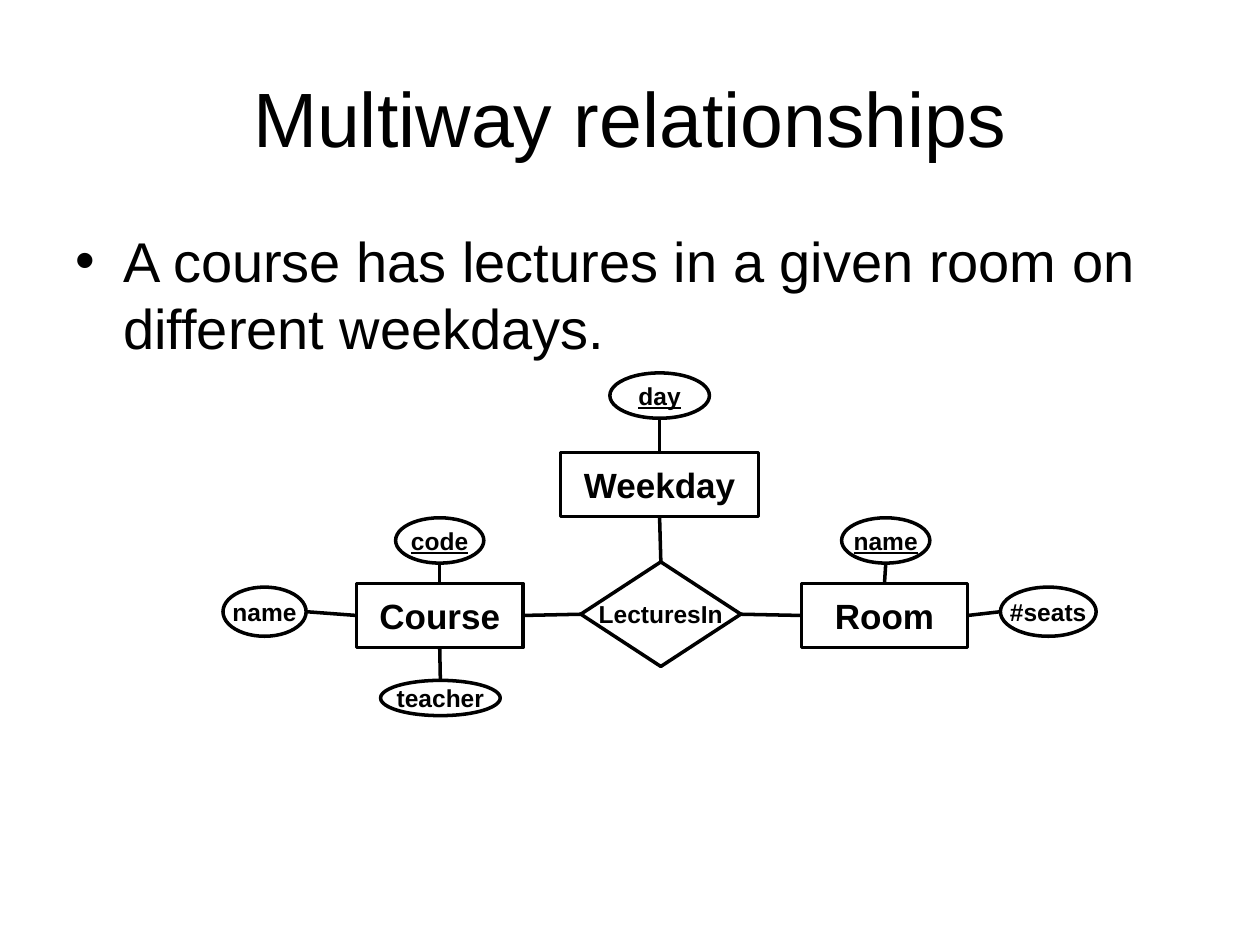
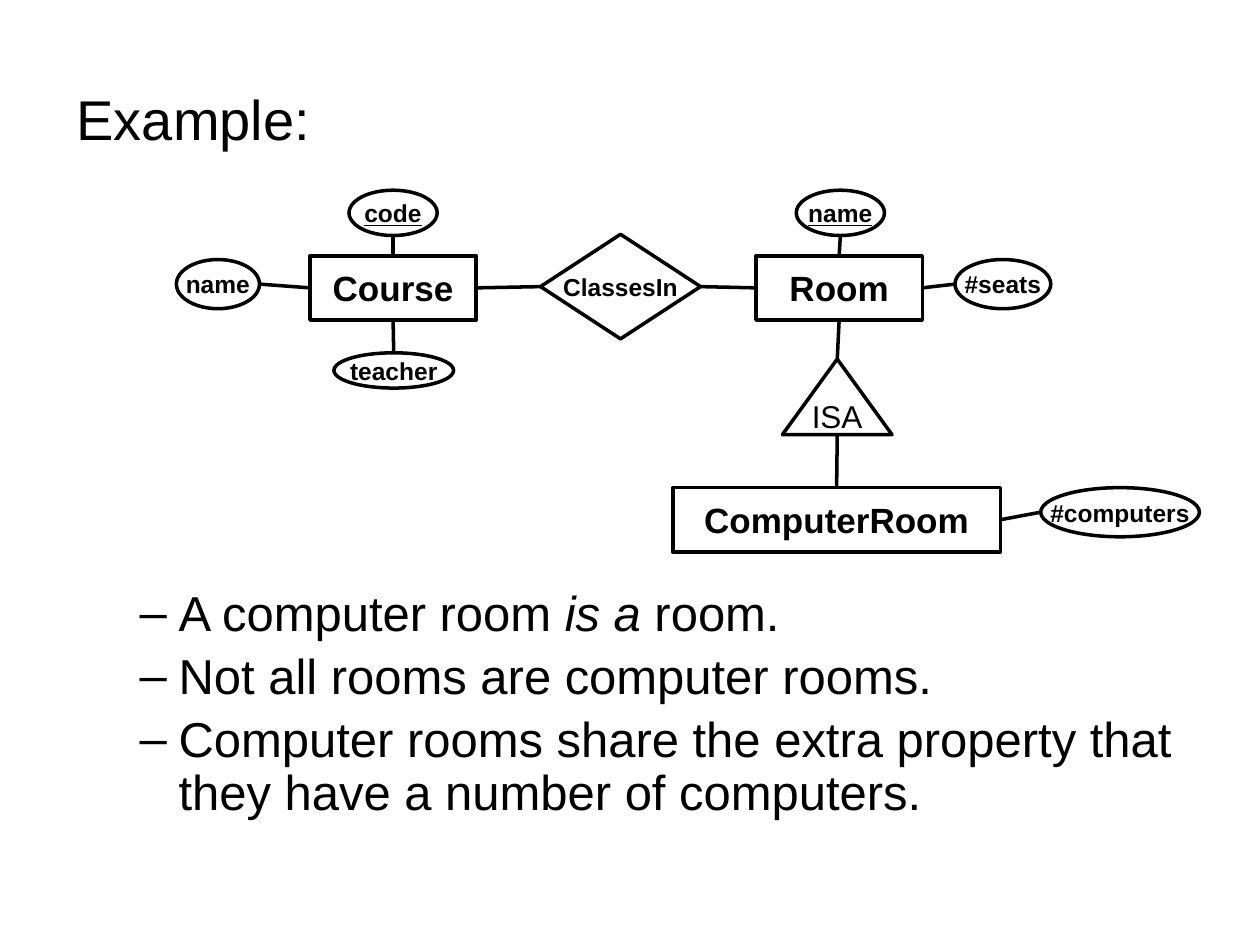
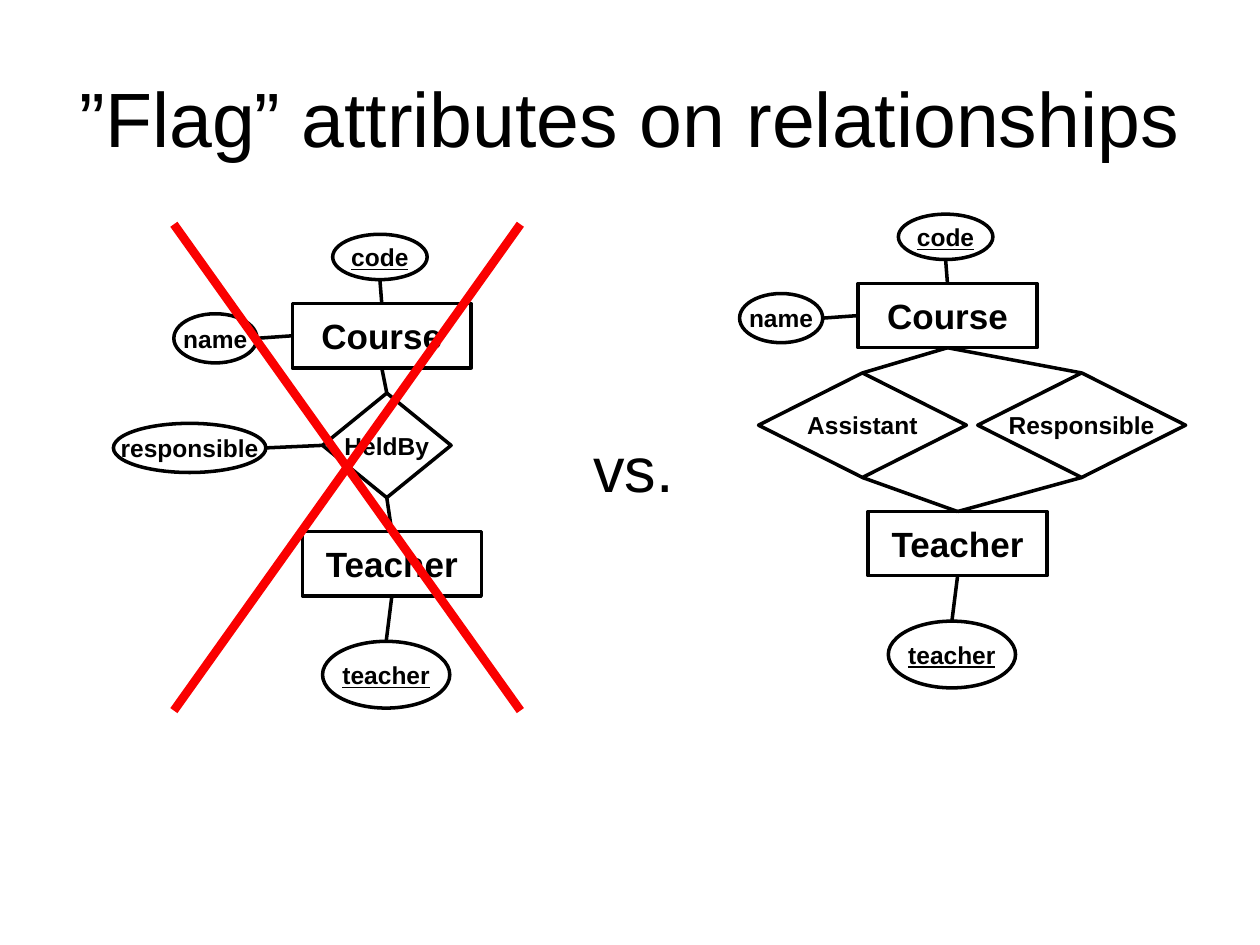
from typing import NamedTuple

from lxml.etree import SubElement
from pptx import Presentation
from pptx.dml.color import RGBColor
from pptx.enum.shapes import MSO_CONNECTOR, MSO_SHAPE
from pptx.enum.text import MSO_ANCHOR, PP_ALIGN
from pptx.oxml.ns import qn
from pptx.util import Inches, Pt

BLACK = RGBColor(0, 0, 0)
RED = RGBColor(0xFA, 0, 0)
FONT = "Arial"
TOP, LEFT, BOTTOM, RIGHT = range(4)
BOX, OVAL = MSO_SHAPE.RECTANGLE, MSO_SHAPE.OVAL
DIAMOND, TRIANGLE = MSO_SHAPE.DIAMOND, MSO_SHAPE.ISOSCELES_TRIANGLE
JOINED = (BOX, DIAMOND)  # kinds whose sites are numbered like the sides
STYLES = {
    BOX: {"size": Pt(20), "bold": True},
    OVAL: {"size": Pt(14), "bold": True},
    DIAMOND: {"size": Pt(14), "bold": True},
    TRIANGLE: {"size": Pt(18), "bold": False},
}


class Node(NamedTuple):
    text: str
    kind: MSO_SHAPE
    x: float
    y: float
    w: float
    h: float
    key: bool = False


class Link(NamedTuple):
    start: str
    side: int
    end: str
    goal: int


class Group(NamedTuple):
    """Nodes placed from the corner of the first one, with their links."""
    nodes: tuple[Node, ...]
    links: tuple[Link, ...]


class Level(NamedTuple):
    mark: str
    size: int
    margin: float
    hang: float
    spacing: float


COURSE = Group(
    (Node("Course", BOX, 0, 0, 1.32, 0.51),
     Node("name", OVAL, -1.06, 0.03, 0.66, 0.39),
     Node("code", OVAL, 0.31, -0.52, 0.7, 0.36, True),
     Node("teacher", OVAL, 0.19, 0.77, 0.95, 0.28)),
    (Link("name", RIGHT, "Course", LEFT),
     Link("code", BOTTOM, "Course", TOP),
     Link("teacher", TOP, "Course", BOTTOM)))
ROOM = Group(
    (Node("Room", BOX, 0, 0, 1.32, 0.51),
     Node("name", OVAL, 0.32, -0.52, 0.7, 0.36, True),
     Node("#seats", OVAL, 1.58, 0.03, 0.76, 0.39)),
    (Link("name", BOTTOM, "Room", TOP),
     Link("#seats", LEFT, "Room", RIGHT)))
WEEKDAY = Group(
    (Node("Weekday", BOX, 0, 0, 1.57, 0.51),
     Node("day", OVAL, 0.39, -0.63, 0.79, 0.36, True)),
    (Link("Weekday", TOP, "day", BOTTOM),))
LAB = Group(
    (Node("ComputerRoom", BOX, 0, 0, 2.6, 0.51),
     Node("#computers", OVAL, 2.92, 0, 1.26, 0.39),
     Node("ISA", TRIANGLE, 0.87, -1.02, 0.87, 0.6)),
    (Link("#computers", LEFT, "ComputerRoom", RIGHT),
     Link("ComputerRoom", TOP, "ISA", BOTTOM)))
STAFF = Group(
    (Node("Course", BOX, 0, 0, 1.42, 0.51),
     Node("code", OVAL, 0.32, -0.55, 0.75, 0.36, True),
     Node("name", OVAL, -0.94, 0.08, 0.66, 0.39),
     Node("teacher", OVAL, 0.24, 2.68, 1.01, 0.53, True),
     Node("Teacher", BOX, 0.08, 1.81, 1.42, 0.51)),
    (Link("name", RIGHT, "Course", LEFT),
     Link("Course", TOP, "code", BOTTOM),
     Link("Teacher", BOTTOM, "teacher", TOP)))

PLAIN = Level("", 32, 0.38, 0.38, 0.9)
POINT = Level("•", 32, 0.38, 0.38, 1)
DASH = Level("–", 28, 0.81, 0.31, 0.9)


def style(run, **values) -> None:
    font = run.font
    font.color.rgb = BLACK
    for name, value in {"name": FONT, **values}.items():
        setattr(font, name, value)


def add_node(slide, node: Node, dx: float = 0, dy: float = 0):
    shape = slide.shapes.add_shape(
        node.kind, Inches(node.x + dx), Inches(node.y + dy),
        Inches(node.w), Inches(node.h))
    shape.shadow.inherit = False
    shape.fill.background()
    shape.line.color.rgb = BLACK
    shape.line.width = Pt(2)
    frame = shape.text_frame
    frame.word_wrap = False
    frame.vertical_anchor = MSO_ANCHOR.MIDDLE
    para = frame.paragraphs[0]
    para.alignment = PP_ALIGN.CENTER
    run = para.add_run()
    run.text = node.text
    style(run, underline=node.key, **STYLES[node.kind])
    return shape


def add_line(slide, start: tuple, end: tuple, color=BLACK, width: int = 2):
    line = slide.shapes.add_connector(MSO_CONNECTOR.STRAIGHT, *start, *end)
    line.line.color.rgb = color
    line.line.width = Pt(width)
    SubElement(line._element.spPr, qn("a:effectLst"))
    return line


def middle(shape, side: int) -> tuple:
    """Middle of one side of a shape."""
    across, down = {TOP: (1, 0), LEFT: (0, 1), BOTTOM: (1, 2), RIGHT: (2, 1)}[side]
    return (shape.left + shape.width * across // 2,
            shape.top + shape.height * down // 2)


def link(slide, start, side: int, end, goal: int) -> None:
    line = add_line(slide, middle(start, side), middle(end, goal))
    if start.auto_shape_type in JOINED:
        line.begin_connect(start, side)
    if end.auto_shape_type in JOINED:
        line.end_connect(end, goal)


def add_group(slide, group: Group, x: float, y: float) -> dict:
    shapes = {node.text: add_node(slide, node, x, y) for node in group.nodes}
    for start, side, end, goal in group.links:
        link(slide, shapes[start], side, shapes[end], goal)
    return shapes


def add_box(slide, x: float, y: float, w: float, h: float):
    frame = slide.shapes.add_textbox(
        Inches(x), Inches(y), Inches(w), Inches(h)).text_frame
    frame.word_wrap = True
    return frame


def add_text(slide, text: str, size: int, *place: float):
    frame = add_box(slide, *place)
    run = frame.paragraphs[0].add_run()
    run.text = text
    style(run, size=Pt(size))
    return frame


def add_title(slide, text: str) -> None:
    frame = add_text(slide, text, 44, 0.5, 0.3, 9, 1.25)
    frame.vertical_anchor = MSO_ANCHOR.MIDDLE
    frame.paragraphs[0].alignment = PP_ALIGN.CENTER


def add_list(slide, level: Level, items: list, *place: float) -> None:
    """Draw paragraphs; every second part of an item is italic."""
    frame = add_box(slide, *place)
    for i, parts in enumerate(items):
        para = frame.add_paragraph() if i else frame.paragraphs[0]
        para.line_spacing = level.spacing
        para.space_before = Pt(level.size * 0.2)
        props = para._p.get_or_add_pPr()
        props.set("marL", str(Inches(level.margin)))
        props.set("indent", str(-Inches(level.hang)))
        if level.mark:
            SubElement(props, qn("a:buFont"), typeface=FONT)
            SubElement(props, qn("a:buChar"), char=level.mark)
        for j, part in enumerate(parts):
            run = para.add_run()
            run.text = part
            style(run, size=Pt(level.size), italic=j % 2 == 1)


def multiway(slide) -> None:
    add_title(slide, "Multiway relationships")
    add_list(slide, POINT,
             [["A course has lectures in a given room on different weekdays."]],
             0.5, 1.75, 9, 1.29)
    course = add_group(slide, COURSE, 2.83, 4.63)["Course"]
    room = add_group(slide, ROOM, 6.36, 4.63)["Room"]
    day = add_group(slide, WEEKDAY, 4.45, 3.59)["Weekday"]
    held = add_node(slide, Node("LecturesIn", DIAMOND, 4.61, 4.46, 1.27, 0.83))
    link(slide, course, RIGHT, held, LEFT)
    link(slide, held, RIGHT, room, LEFT)
    link(slide, held, TOP, day, BOTTOM)


def subclass(slide) -> None:
    add_list(slide, PLAIN, [["Example:"]], 0.51, 0.68, 9, 0.65)
    add_list(slide, DASH,
             [["A computer room ", "is a", " room."],
              ["Not all rooms are computer rooms."],
              ["Computer rooms share the extra property that "
               "they have a number of computers."]],
             0.51, 4.63, 9, 2.27)
    course = add_group(slide, COURSE, 2.46, 2.03)["Course"]
    room = add_group(slide, ROOM, 6, 2.03)["Room"]
    held = add_node(slide, Node("ClassesIn", DIAMOND, 4.29, 1.86, 1.27, 0.83))
    link(slide, course, RIGHT, held, LEFT)
    link(slide, held, RIGHT, room, LEFT)
    isa = add_group(slide, LAB, 5.34, 3.87)["ISA"]
    link(slide, isa, TOP, room, BOTTOM)


def flags(slide) -> None:
    add_title(slide, "”Flag” attributes on relationships")
    bad = add_group(slide, STAFF, 2.32, 2.41)
    held = add_node(slide, Node("HeldBy", DIAMOND, 2.56, 3.12, 1.02, 0.83))
    flag = add_node(slide, Node("responsible", OVAL, 0.9, 3.36, 1.21, 0.39))
    link(slide, flag, RIGHT, held, LEFT)
    good = add_group(slide, STAFF, 6.81, 2.25)
    roles = [add_node(slide, Node(text, DIAMOND, x, 2.96, 1.65, 0.83))
             for text, x in (("Responsible", 7.76), ("Assistant", 6.02))]
    for role, ends in ((held, bad), *((role, good) for role in roles)):
        link(slide, role, TOP, ends["Course"], BOTTOM)
        link(slide, role, BOTTOM, ends["Teacher"], TOP)
    add_text(slide, "vs.", 36, 4.61, 3.36, 1.02, 0.71)
    left, right, top, low = map(Inches, (1.38, 4.13, 1.78, 5.64))
    for start, end in ((left, right), (right, left)):
        add_line(slide, (start, top), (end, low), RED, 5)


def main() -> None:
    deck = Presentation()
    deck.slide_width, deck.slide_height = Inches(10), Inches(7.5)
    for draw in (multiway, subclass, flags):
        draw(deck.slides.add_slide(deck.slide_layouts[6]))
    deck.save("out.pptx")


if __name__ == "__main__":
    main()
